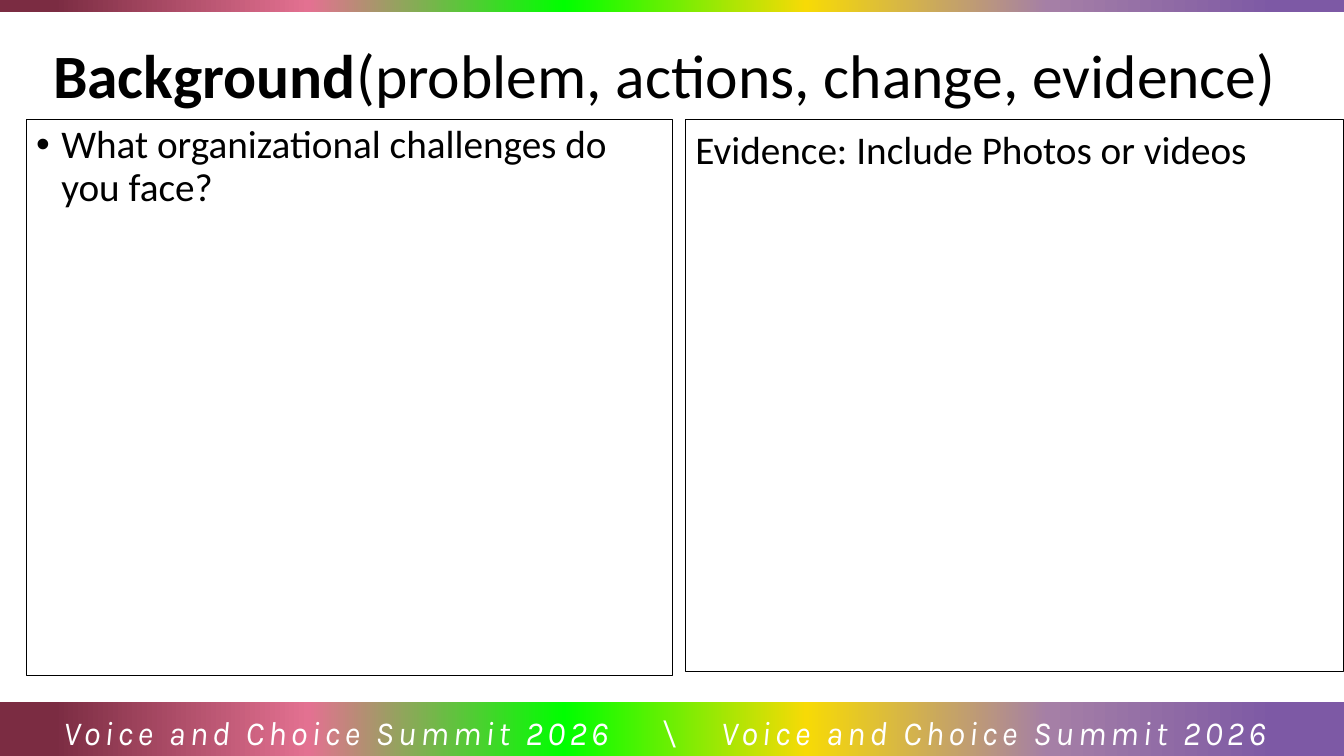
from lxml import etree
from pptx import Presentation
from pptx.dml.color import RGBColor
from pptx.enum.shapes import MSO_SHAPE
from pptx.enum.text import MSO_ANCHOR, PP_ALIGN
from pptx.oxml.ns import qn
from pptx.util import Inches, Pt

RECTANGLE = MSO_SHAPE.RECTANGLE
TOP, MIDDLE = MSO_ANCHOR.TOP, MSO_ANCHOR.MIDDLE
LEFT, CENTER = PP_ALIGN.LEFT, PP_ALIGN.CENTER

COLORS = {
    "black": "000000", "white": "FFFFFF", "purple": "7D59A5", "mauve": "A57FA6",
    "yellow": "F7DA06", "green": "00FF00", "pink": "E37191", "maroon": "7B2C42",
}
BAND_STOPS = [(5, "purple"), (22, "mauve"), (40, "yellow"),
              (58, "green"), (77, "pink"), (96, "maroon")]


def write_text(paragraph, text, font="Calibri", size=28, color="black",
               bold=False, italic=False, spacing=None):
    span = paragraph.add_run()
    span.text = text
    span.font.name = font
    span.font.size = Pt(size)
    span.font.color.rgb = RGBColor.from_string(COLORS[color])
    span.font.bold = bold
    span.font.italic = italic
    if spacing is not None:
        span.font._element.set("spc", str(spacing * 100))


deck = Presentation()
deck.slide_width, deck.slide_height = Inches(13.33), Inches(7.5)
page = deck.slides.add_slide(deck.slide_layouts[6])

# Rainbow bands along the top and bottom edges
for top, height in [(0, 0.12), (6.96, 0.57)]:
    band = page.shapes.add_shape(RECTANGLE, 0, Inches(top), deck.slide_width, Inches(height))
    band.shadow.inherit = False
    band.line.fill.background()
    band.fill.gradient()
    band.fill.gradient_angle = 180
    stop_list = band._element.spPr.find(qn("a:gradFill")).find(qn("a:gsLst"))
    for old_stop in list(stop_list):
        stop_list.remove(old_stop)
    for position, name in BAND_STOPS:
        stop = etree.SubElement(stop_list, qn("a:gs"), pos=str(position * 1000))
        etree.SubElement(stop, qn("a:srgbClr"), val=COLORS[name])

# Title
title = page.shapes.add_textbox(0, Inches(0.27), deck.slide_width, Inches(0.92))
title.text_frame.word_wrap = True
title.text_frame.vertical_anchor = MIDDLE
heading = title.text_frame.paragraphs[0]
heading.alignment = CENTER
write_text(heading, "Background", size=44, bold=True)
write_text(heading, "(problem, actions, change, evidence) ", size=44)

# Challenge and evidence panels
panels = [
    (0.26, 6.41, 5.51, "What organizational challenges do you face?", True),
    (6.8, 6.53, 5.47, "Evidence: Include Photos or videos", False),
]
for left, width, height, text, bulleted in panels:
    panel = page.shapes.add_shape(RECTANGLE, Inches(left), Inches(1.19),
                                  Inches(width), Inches(height))
    panel.shadow.inherit = False
    panel.fill.background()
    panel.line.color.rgb = RGBColor.from_string(COLORS["black"])
    panel.line.width = Pt(0.75)
    panel.text_frame.word_wrap = True
    panel.text_frame.vertical_anchor = TOP
    paragraph = panel.text_frame.paragraphs[0]
    paragraph.alignment = LEFT
    if bulleted:
        paragraph.line_spacing = 0.9
        properties = paragraph._p.get_or_add_pPr()
        properties.set("marL", str(Inches(0.25)))
        properties.set("indent", str(Inches(-0.25)))
        etree.SubElement(properties, qn("a:buFont"), typeface="Arial")
        etree.SubElement(properties, qn("a:buChar"), char="•")
    write_text(paragraph, text)

# Footer, with tab stops for the separator and the second name
footer = page.shapes.add_textbox(0, Inches(6.99), deck.slide_width, Inches(0.49))
footer.text_frame.word_wrap = True
footer.text_frame.margin_left = Inches(0.63)
footer_line = footer.text_frame.paragraphs[0]
footer_line.alignment = LEFT
footer_line.line_spacing = 1.07
tabs = etree.SubElement(footer_line._p.get_or_add_pPr(), qn("a:tabLst"))
for position in (5.92, 6.52):
    etree.SubElement(tabs, qn("a:tab"), pos=str(Inches(position)), algn="l")
write_text(footer_line, "Voice and Choice Summit 2026\t\\\tVoice and Choice Summit 2026",
           font="Karla", size=24, color="white", italic=True, spacing=3)

deck.save("out.pptx")
